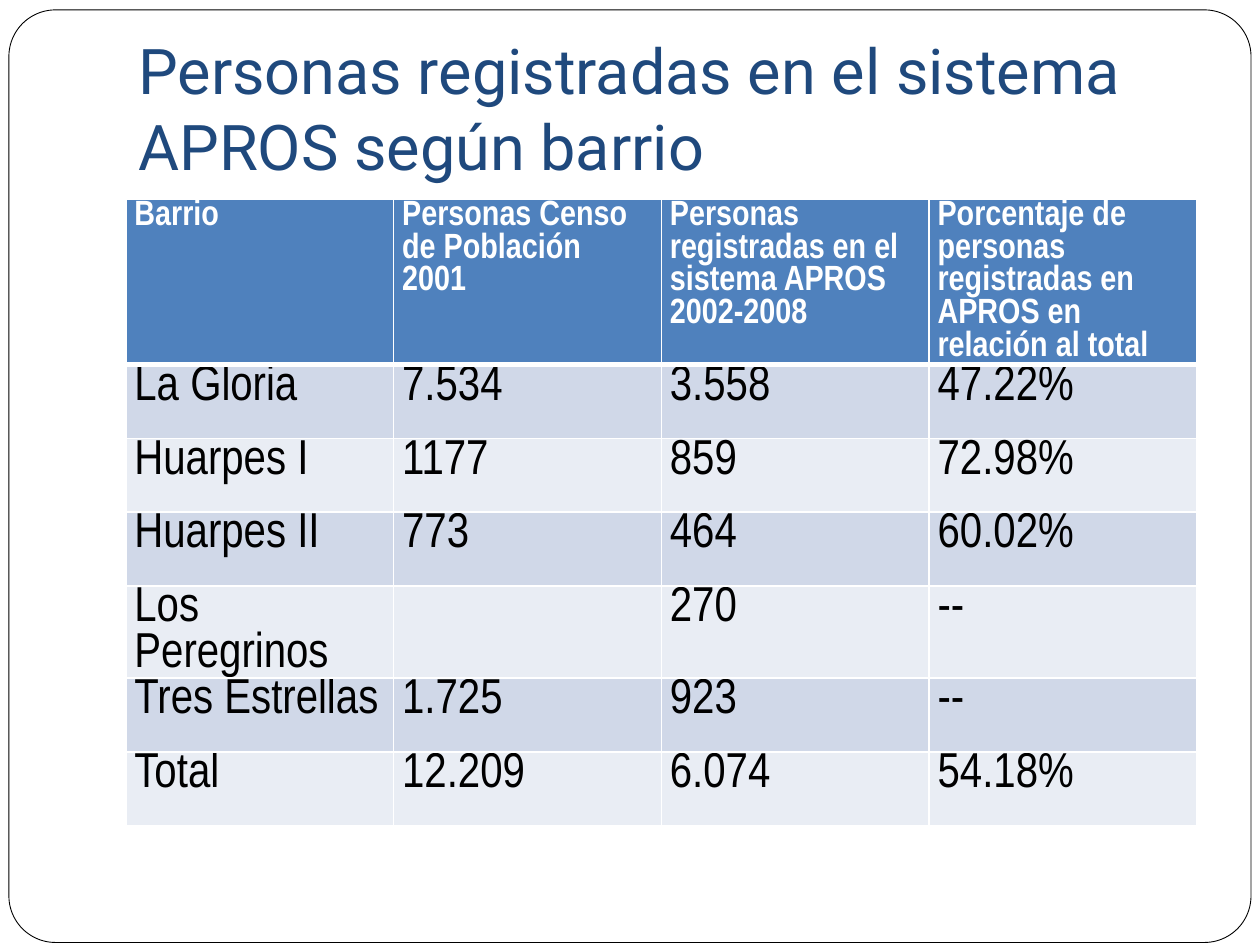
from lxml.etree import SubElement
from pptx import Presentation
from pptx.dml.color import RGBColor
from pptx.enum.shapes import MSO_SHAPE
from pptx.enum.text import MSO_ANCHOR, MSO_AUTO_SIZE, PP_ALIGN
from pptx.oxml.ns import qn
from pptx.util import Cm, Pt

HEADING = "Personas registradas en el sistema APROS según barrio"
COLUMNS = [
    "Barrio",
    "Personas Censo de Población 2001",
    "Personas registradas en el sistema APROS 2002-2008",
    "Porcentaje de personas registradas en APROS en relación al total",
]
BARRIOS = [
    ("La Gloria", "7.534", "3.558", "47.22%"),
    ("Huarpes I", "1177", "859", "72.98%"),
    ("Huarpes II", "773", "464", "60.02%"),
    ("Los Peregrinos", "", "270", "--"),
    ("Tres Estrellas", "1.725", "923", "--"),
    ("Total", "12.209", "6.074", "54.18%"),
]
THEME = {
    "white": RGBColor(0xFF, 0xFF, 0xFF),
    "black": RGBColor(0, 0, 0),
    "navy": RGBColor(0x1F, 0x49, 0x7D),
    "header": RGBColor(0x4F, 0x81, 0xBD),
    "bands": [RGBColor(0xD0, 0xD8, 0xE8), RGBColor(0xE9, 0xED, 0xF4)],
    "heading_font": "Roboto",
    "table_font": "Arial Narrow",
    "heading_size": Pt(36),
    "header_size": Pt(20),
    "body_size": Pt(28),
    "thin": Pt(1),
    "thick": Pt(3),
}


def apply(target, values):
    for name, value in values.items():
        setattr(target, name, value)


def style_font(font, color, **values):
    apply(font, values)
    font.color.rgb = THEME[color]


def add_borders(cell, row):
    properties = cell._tc.get_or_add_tcPr()
    for position, side in enumerate(("lnL", "lnR", "lnT", "lnB")):
        under_header = (row, side) in ((0, "lnB"), (1, "lnT"))
        width = THEME["thick" if under_header else "thin"]
        border = SubElement(properties, qn(f"a:{side}"), w=str(int(width)))
        fill = SubElement(border, qn("a:solidFill"))
        SubElement(fill, qn("a:srgbClr"), val=str(THEME["white"]))
        properties.insert(position, border)


def add_card(slide):
    card = slide.shapes.add_shape(
        MSO_SHAPE.ROUNDED_RECTANGLE, Cm(0.18), Cm(0.2), Cm(25.04), Cm(18.8))
    card.adjustments[0] = 0.05
    card.shadow.inherit = False
    card.fill.solid()
    card.fill.fore_color.rgb = THEME["white"]
    card.line.color.rgb = THEME["black"]
    card.line.width = Pt(0.5)
    slide.shapes._spTree.insert(2, card._element)


def add_heading(slide):
    heading = slide.shapes.title
    apply(heading, {"left": Cm(2.54), "top": Cm(0.76),
                    "width": Cm(21.59), "height": Cm(3.18)})
    frame = heading.text_frame
    frame.text = HEADING
    apply(frame, {
        "word_wrap": True, "auto_size": MSO_AUTO_SIZE.NONE,
        "vertical_anchor": MSO_ANCHOR.BOTTOM,
        "margin_left": Cm(0.25), "margin_right": Cm(0.25),
        "margin_top": Cm(0.13), "margin_bottom": Cm(0.25)})
    paragraph = frame.paragraphs[0]
    paragraph.alignment = PP_ALIGN.LEFT
    style_font(paragraph.runs[0].font, "navy", name=THEME["heading_font"],
               size=THEME["heading_size"], bold=False)


def add_barrio_table(slide):
    rows = [COLUMNS, *BARRIOS]
    table = slide.shapes.add_table(
        len(rows), len(COLUMNS), Cm(2.54), Cm(4.02),
        Cm(21.59), Cm(1.49) * len(rows)).table
    for r, texts in enumerate(rows):
        is_header = r == 0
        color = "white" if is_header else "black"
        size = THEME["header_size" if is_header else "body_size"]
        band = THEME["header"] if is_header else THEME["bands"][(r - 1) % 2]
        for c, text in enumerate(texts):
            cell = table.cell(r, c)
            cell.text = text
            apply(cell, {"margin_left": Cm(0.17), "margin_right": Cm(0.17),
                         "margin_top": 0, "margin_bottom": 0})
            cell.fill.solid()
            cell.fill.fore_color.rgb = band
            add_borders(cell, r)
            style_font(cell.text_frame.paragraphs[0].font, color,
                       name=THEME["table_font"], size=size, bold=is_header)
            for run in cell.text_frame.paragraphs[0].runs:
                style_font(run.font, color, name=THEME["table_font"],
                           size=size, bold=is_header)


def main():
    presentation = Presentation()
    apply(presentation, {"slide_width": Cm(25.4), "slide_height": Cm(19.05)})
    slide = presentation.slides.add_slide(presentation.slide_layouts[5])
    add_card(slide)
    add_heading(slide)
    add_barrio_table(slide)
    presentation.save("out.pptx")


if __name__ == "__main__":
    main()
